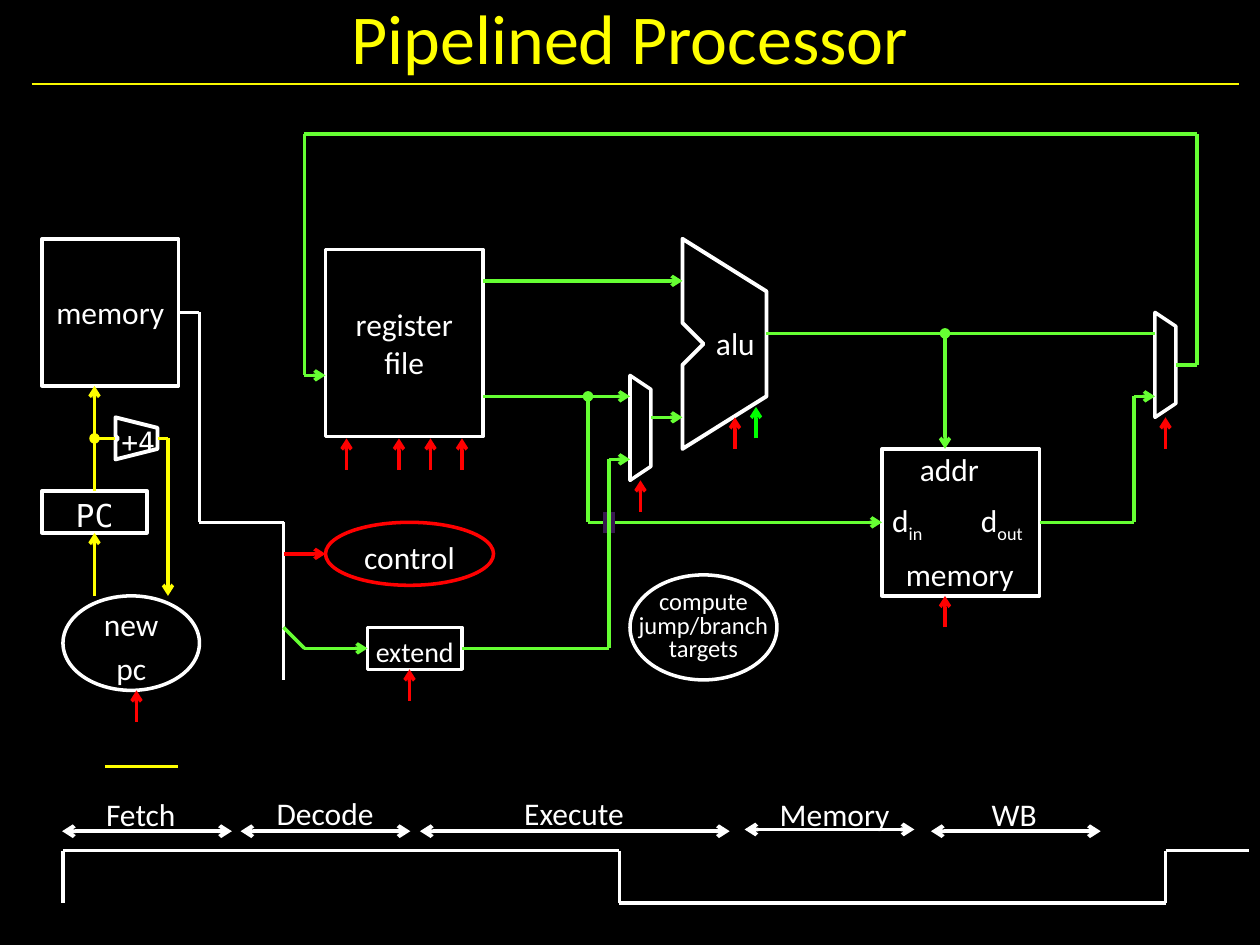
import pptx
import pptx.util
import pptx.dml.color
import pptx.enum.shapes
import pptx.enum.text
import pptx.oxml.ns
import lxml.etree

Pt = pptx.util.Pt
RGBColor = pptx.dml.color.RGBColor
MSO_SHAPE = pptx.enum.shapes.MSO_SHAPE
PP_ALIGN = pptx.enum.text.PP_ALIGN
MSO_ANCHOR = pptx.enum.text.MSO_ANCHOR
qn = pptx.oxml.ns.qn

BLACK = RGBColor(0x00, 0x00, 0x00)
WHITE = RGBColor(0xFF, 0xFF, 0xFF)
RED = RGBColor(0xFF, 0x00, 0x00)
YELLOW = RGBColor(0xFF, 0xFF, 0x00)
RULE = RGBColor(0xF9, 0xF9, 0x00)
GREEN = RGBColor(0x66, 0xFF, 0x33)
BRIGHT_GREEN = RGBColor(0x00, 0xFF, 0x00)
PURPLE = RGBColor(0x38, 0x18, 0x50)

MONO = "DejaVu Sans Mono"
LOOSE = 1.16
SIGNAL = 18  # length of a control signal arrow


def set_text(shape, text, size=18, color=WHITE, font="Calibri", spacing=None,
             wrap=True, align=PP_ALIGN.CENTER, anchor=MSO_ANCHOR.MIDDLE,
             margin=None, subscript=""):
    tf = shape.text_frame
    tf.word_wrap = wrap
    tf.vertical_anchor = anchor
    if margin is not None:
        tf.margin_left = tf.margin_right = Pt(margin)
    p = tf.paragraphs[0]
    p.text = text
    p.alignment = align
    p.line_spacing = spacing
    if subscript:
        r = p.add_run()
        r.text = subscript
        r.font._element.set("baseline", "-25000")
    for r in p.runs:
        r.font.size = Pt(size)
        r.font.name = font
        r.font.color.rgb = color


def add_label(s, text, x, y, w, h, **style):
    sp = s.shapes.add_textbox(Pt(x), Pt(y), Pt(w), Pt(h))
    set_text(sp, text, **style)


def paint(sp, color, width):
    sp.shadow.inherit = False
    sp.fill.solid()
    sp.fill.fore_color.rgb = BLACK
    sp.line.color.rgb = color
    sp.line.width = Pt(width)


def add_block(s, kind, x, y, w, h, text="", color=WHITE, **style):
    sp = s.shapes.add_shape(kind, Pt(x), Pt(y), Pt(w), Pt(h))
    paint(sp, color, 2)
    if text:
        set_text(sp, text, **style)


def add_outline(s, points, width=2.25):
    points = [(Pt(x), Pt(y)) for x, y in points]
    builder = s.shapes.build_freeform(*points[0])
    builder.add_line_segments(points[1:], close=True)
    paint(builder.convert_to_shape(), WHITE, width)


def add_mux(s, x, y):
    add_outline(s, [(x, y), (x + 12, y + 8), (x + 12, y + 52), (x, y + 60)], 2)


def add_wire(s, color, points, head=None, tail=None, width=2):
    """Join the points with straight lines; ends go on the first and last."""
    last = len(points) - 2
    for i, (a, b) in enumerate(zip(points, points[1:])):
        line = s.shapes.add_connector(
            pptx.enum.shapes.MSO_CONNECTOR.STRAIGHT, *map(Pt, a + b))
        line.line.color.rgb = color
        line.line.width = Pt(width)
        ln = line.line._get_or_add_ln()
        if head and i == 0:
            lxml.etree.SubElement(ln, qn("a:headEnd")).set("type", head)
        if tail and i == last:
            lxml.etree.SubElement(ln, qn("a:tailEnd")).set("type", tail)
        lxml.etree.SubElement(line._element.spPr, qn("a:effectLst"))


def add_signal(s, x, tip, color=RED):
    add_wire(s, color, [(x, tip + SIGNAL), (x, tip)], tail="arrow")


def add_title(s):
    add_wire(s, RULE, [(18, 48), (708, 48)], width=0.75)
    add_label(s, "Pipelined Processor", 18, 0, 684, 42, size=40, color=YELLOW)


def add_blocks(s):
    rect, oval = MSO_SHAPE.RECTANGLE, MSO_SHAPE.OVAL
    # Fetch
    add_block(s, rect, 24, 136.5, 78, 84, "memory")
    add_block(s, rect, 24, 280.5, 60, 24, "PC", font=MONO, spacing=LOOSE)
    add_block(s, oval, 36, 340.5, 78, 54, "new\npc", spacing=LOOSE, wrap=False)
    add_outline(s, [(66, 238.5), (90, 244.5), (90, 256.5), (66, 262.5),
                    (66, 252), (67.5, 250.5), (66, 249)])
    add_label(s, "+4", 64, 238.5, 30, 24, size=16, font=MONO,
              spacing=LOOSE, wrap=False, margin=0)
    # Decode
    add_block(s, rect, 186, 142.5, 90, 107, "register\nfile")
    add_block(s, oval, 186, 298.5, 96, 36, "control", RED,
              spacing=LOOSE, wrap=False)
    add_block(s, rect, 210, 358.5, 54, 24, "extend", size=16,
              spacing=LOOSE, margin=0)
    # Execute
    add_outline(s, [(390, 136.5), (438, 166.5), (438, 226.5), (390, 256.5),
                    (390, 208.5), (402, 196.5), (390, 184.5)])
    add_label(s, "alu", 402, 178.5, 36.5, 31, spacing=LOOSE, wrap=False)
    add_mux(s, 360, 214.5)
    add_block(s, oval, 360, 328.5, 84, 60, "compute\njump/branch\ntargets",
              size=14, spacing=0.8, wrap=False)
    # Data memory and write-back
    add_block(s, rect, 504, 256.5, 90, 84)
    for text, x, y, w, h, sub in [("addr", 504, 250.5, 77, 31, ""),
                                  ("d", 498, 281, 41, 31, "in"),
                                  ("d", 552, 281, 41, 31, "out"),
                                  ("memory", 510, 310.5, 77, 32, "")]:
        add_label(s, text, x, y, w, h, spacing=LOOSE, subscript=sub)
    add_mux(s, 660, 178.5)


def add_wires(s):
    # Program counter loop
    add_wire(s, YELLOW, [(54, 220.5), (54, 280.5)], head="arrow")
    add_wire(s, YELLOW, [(54, 304.5), (54, 340.5)], head="arrow")
    add_wire(s, YELLOW, [(54, 250.5), (66, 250.5)], head="oval")
    add_wire(s, YELLOW, [(90, 250.5), (96, 250.5), (96, 340.5)], tail="arrow")
    add_wire(s, YELLOW, [(60, 438), (102, 438)])
    # Instruction
    add_wire(s, WHITE, [(102, 178.5), (114, 178.5), (114, 298.5),
                        (162, 298.5), (162, 388.5)])
    add_wire(s, RED, [(162, 316.5), (186, 316.5)], tail="arrow")
    add_wire(s, GREEN, [(162, 358.5), (174, 370.5), (210, 370.5)], tail="arrow")
    # Operands
    add_wire(s, GREEN, [(276, 160.5), (390, 160.5)], tail="arrow")
    add_wire(s, GREEN, [(276, 226.5), (360, 226.5)], tail="arrow")
    add_wire(s, GREEN, [(372, 238.5), (390, 238.5)], tail="arrow")
    add_wire(s, GREEN, [(336, 226.5), (336, 298.5), (504, 298.5)],
             head="oval", tail="arrow")
    # Immediate, crossing over the store data
    add_wire(s, PURPLE, [(348, 292.5), (348, 304.5)], width=7)
    add_wire(s, GREEN, [(264, 370.5), (348, 370.5), (348, 262.5),
                        (360, 262.5)], tail="arrow")
    # Result, loaded data and write-back
    add_wire(s, GREEN, [(438, 190.5), (660, 190.5)])
    add_wire(s, GREEN, [(540, 190.5), (540, 256.5)], head="oval", tail="arrow")
    add_wire(s, GREEN, [(594, 298.5), (648, 298.5), (648, 226.5),
                        (660, 226.5)], tail="arrow")
    add_wire(s, GREEN, [(672, 208.5), (684, 208.5), (684, 76.5), (174, 76.5),
                        (174, 214.5), (186, 214.5)], tail="arrow")
    # Control signals
    for x, tip in [(78, 394.5), (198, 250.5), (228, 250.5), (246, 250.5),
                   (264, 250.5), (234, 382.5), (366, 274.5), (420, 238.5),
                   (540, 340.5), (666, 238.5)]:
        add_signal(s, x, tip)
    add_signal(s, 432, 232.5, BRIGHT_GREEN)


def add_stages(s):
    for text, x, y, w, left, right, arrow_y in [
            ("Fetch", 53.5, 451, 54.5, 35.5, 132.5, 475),
            ("Decode", 151, 450, 70.5, 137.5, 234.5, 475),
            ("Execute", 292.5, 450, 72, 240, 417, 475),
            ("Memory", 438.5, 451, 78, 425.5, 522.5, 474),
            ("WB", 559.5, 451, 40, 532, 629, 475)]:
        add_wire(s, WHITE, [(left, arrow_y), (right, arrow_y)],
                 head="arrow", tail="arrow", width=2.25)
        add_label(s, text, x, y, w, 29, wrap=False, align=PP_ALIGN.LEFT,
                  anchor=MSO_ANCHOR.TOP)
    # Clock
    high, low = 486, 516
    add_wire(s, WHITE, [(36, low), (36, high), (354, high), (354, low),
                        (666, low), (666, high), (714, high)], width=2.25)


def main():
    prs = pptx.Presentation()
    prs.slide_width, prs.slide_height = Pt(720), Pt(540)
    s = prs.slides.add_slide(prs.slide_layouts[6])
    s.background.fill.solid()
    s.background.fill.fore_color.rgb = BLACK
    add_title(s)
    add_blocks(s)
    add_wires(s)
    add_stages(s)
    prs.save("out.pptx")


if __name__ == "__main__":
    main()
